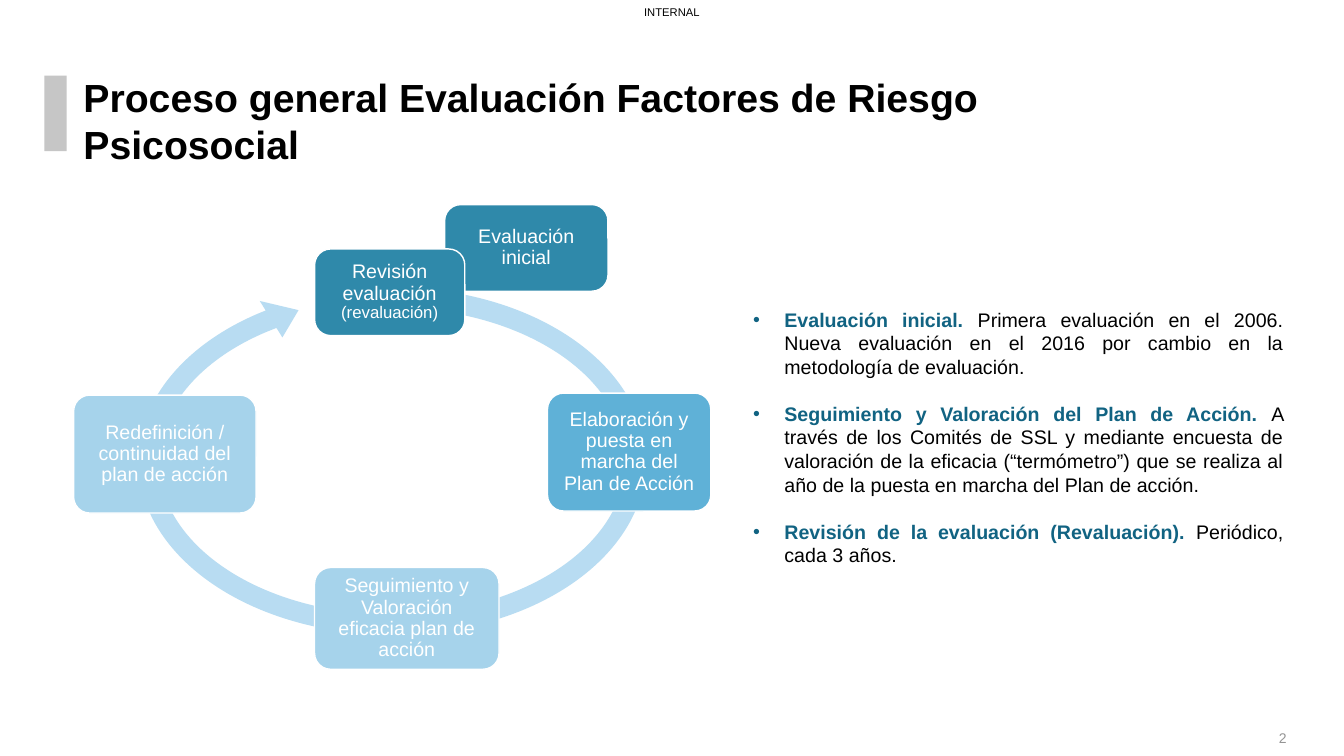
from dataclasses import dataclass

from lxml import etree
from pptx import Presentation
from pptx import util as u
from pptx.dml.color import RGBColor
from pptx.enum import shapes, text
from pptx.oxml.ns import qn

PX = 9144
AL = text.PP_ALIGN
MID = text.MSO_ANCHOR.MIDDLE
TOP = text.MSO_ANCHOR.TOP


@dataclass(frozen=True)
class Theme:
    font: str = "Arial"
    black: str = "000000"
    white: str = "FFFFFF"
    marker: str = "C6C6C6"
    muted: str = "949494"
    arrow: str = "B8DCF2"
    dark: str = "2F89AA"
    medium: str = "5FB1D7"
    light: str = "A6D3EB"
    accent: str = "116382"
    title: int = 28
    body: int = 14
    small: int = 12
    number: int = 10
    label: int = 8


class SlideBuilder:
    """Draw styled elements on one slide, with lengths in hundredths of an inch."""

    def __init__(self, prs, theme):
        self.t = theme
        self.s = prs.slides.add_slide(prs.slide_layouts[6])

    def run(self, p, words, size, color, bold=False):
        r = p.add_run()
        r.text = words
        r.font.name = self.t.font
        r.font.size = u.Pt(size)
        r.font.bold = bold
        r.font.color.rgb = RGBColor.from_string(color)

    def frame(self, sp, anchor, inset_x=0, inset_y=0):
        tf = sp.text_frame
        tf.word_wrap = True
        tf.vertical_anchor = anchor
        tf.margin_left = tf.margin_right = inset_x * PX
        tf.margin_top = tf.margin_bottom = inset_y * PX
        return tf

    def textbox(self, box, anchor=TOP, inset_x=0, inset_y=0):
        sp = self.s.shapes.add_textbox(*(v * PX for v in box))
        return self.frame(sp, anchor, inset_x, inset_y)

    def line_of_text(self, box, words, size, color, align, anchor=MID):
        p = self.textbox(box, anchor).paragraphs[0]
        p.alignment = align
        self.run(p, words, size, color)

    def title(self, box, words):
        p = self.textbox(box, TOP, 10, 5).paragraphs[0]
        p.alignment = AL.LEFT
        self.run(p, words, self.t.title, self.t.black, True)

    def shape(self, kind, box, fill):
        sp = self.s.shapes.add_shape(kind, *(v * PX for v in box))
        sp.shadow.inherit = False
        sp.fill.solid()
        sp.fill.fore_color.rgb = RGBColor.from_string(fill)
        sp.line.fill.background()
        return sp

    def cycle_arrow(self, box, adjustments):
        sp = self.shape(shapes.MSO_SHAPE.CIRCULAR_ARROW, box, self.t.arrow)
        for i, value in enumerate(adjustments):
            sp.adjustments[i] = value

    def step(self, box, fill, words, note="", radius=16):
        sp = self.shape(shapes.MSO_SHAPE.ROUNDED_RECTANGLE, box, fill)
        sp.adjustments[0] = radius / min(box[2:])
        sp.line.color.rgb = RGBColor.from_string(self.t.white)
        sp.line.width = u.Pt(1)
        p = self.frame(sp, MID, 8, 8).paragraphs[0]
        p.alignment = AL.CENTER
        p.line_spacing = 0.9
        self.run(p, words, self.t.body, self.t.white)
        if note:
            self.run(p, note, self.t.small, self.t.white)

    def bullets(self, box, items, indent=31, gap=17):
        tf = self.textbox(box)
        for i, (lead, detail) in enumerate(items):
            p = tf.add_paragraph() if i else tf.paragraphs[0]
            p.alignment = AL.JUSTIFY
            if i:
                p.space_before = u.Pt(gap)
            pPr = p._p.get_or_add_pPr()
            pPr.set("marL", str(indent * PX))
            pPr.set("indent", str(-indent * PX))
            color = etree.SubElement(pPr, qn("a:buClr"))
            etree.SubElement(color, qn("a:srgbClr"), val=self.t.accent)
            etree.SubElement(pPr, qn("a:buFont"), typeface=self.t.font)
            etree.SubElement(pPr, qn("a:buChar"), char="•")
            self.run(p, lead, self.t.body, self.t.accent, True)
            self.run(p, detail, self.t.body, self.t.black)


def main():
    t = Theme()
    prs = Presentation()
    prs.slide_width, prs.slide_height = 1333 * PX, 750 * PX
    b = SlideBuilder(prs, t)

    b.shape(shapes.MSO_SHAPE.RECTANGLE, (44, 75, 22, 75), t.marker)
    b.line_of_text((626, 0, 81, 24), "INTERNAL", t.label, t.black, AL.CENTER)
    b.title((73, 68, 936, 104), "Proceso general Evaluación Factores de Riesgo Psicosocial")
    b.line_of_text((1193, 724, 83, 17), "2", t.number, t.muted, AL.RIGHT)

    b.cycle_arrow((126, 274, 526, 367), (0.055, 5.2, 137.73, 173.88, 0.058))
    steps = [
        ((441, 203, 162, 86), t.dark, "Evaluación inicial"),
        ((543, 390, 162, 117), t.medium, "Elaboración y puesta en marcha del Plan de Acción"),
        ((312, 563, 183, 101), t.light, "Seguimiento y Valoración eficacia plan de acción"),
        ((73, 392, 181, 117), t.light, "Redefinición / continuidad del plan de acción"),
        ((312, 247, 149, 86), t.dark, "Revisión evaluación ", "(revaluación)"),
    ]
    for step in steps:
        b.step(*step)

    b.bullets((747, 305, 526, 259), [
        ("Evaluación inicial. ",
         "Primera evaluación en el 2006. Nueva evaluación en el 2016 por cambio "
         "en la metodología de evaluación."),
        ("Seguimiento y Valoración del Plan de Acción. ",
         "A través de los Comités de SSL y mediante encuesta de valoración de la "
         "eficacia (“termómetro”) que se realiza al año de la puesta en marcha "
         "del Plan de acción."),
        ("Revisión de la evaluación (Revaluación).", " Periódico, cada 3 años."),
    ])
    prs.save("out.pptx")


if __name__ == "__main__":
    main()
